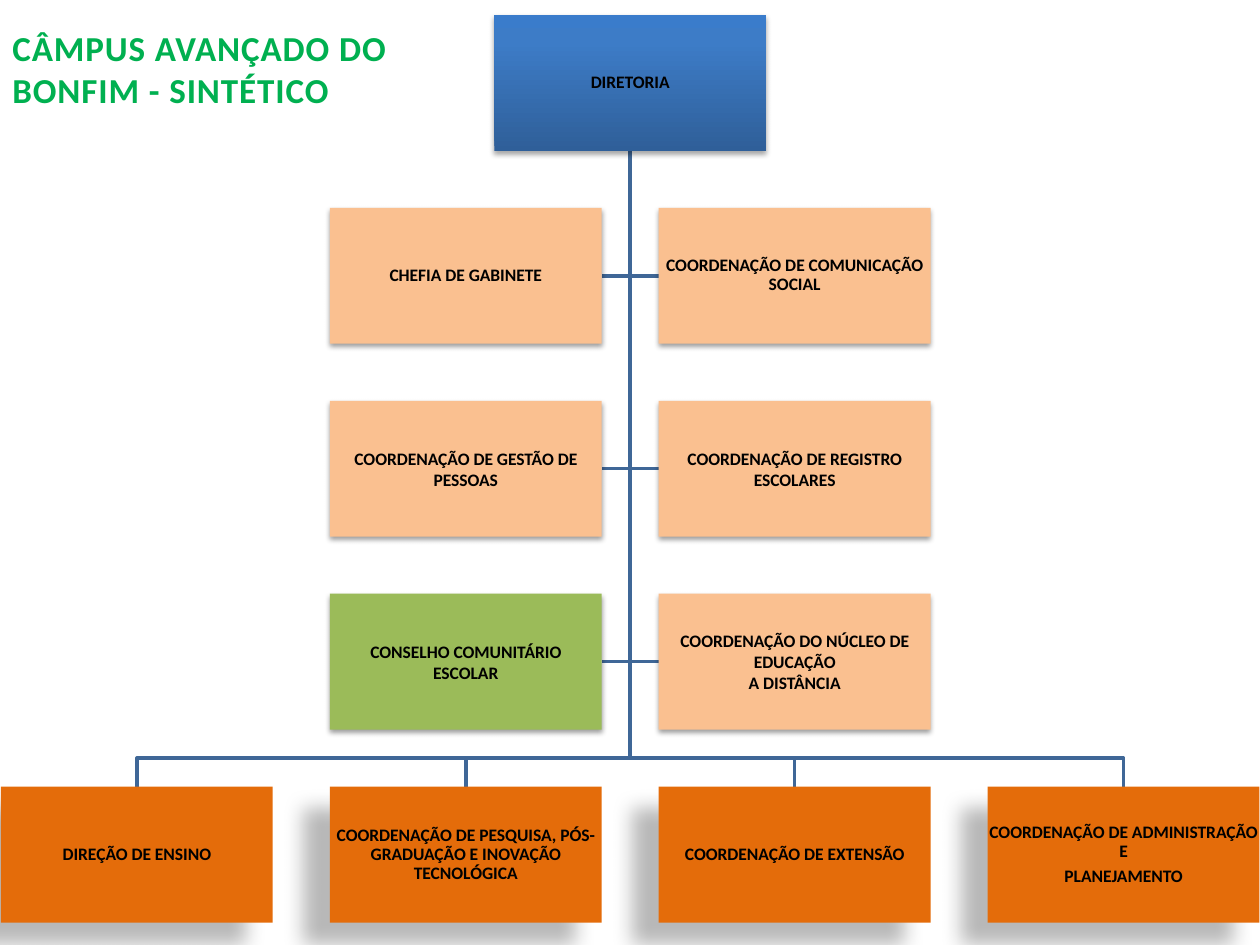
from copy import deepcopy

from lxml import etree
from pptx import Presentation
from pptx.dml.color import RGBColor
from pptx.enum.shapes import MSO_SHAPE
from pptx.enum.text import MSO_ANCHOR, MSO_AUTO_SIZE, PP_ALIGN
from pptx.oxml.ns import qn
from pptx.util import Cm, Pt

RECT = MSO_SHAPE.RECTANGLE
MIDDLE = MSO_ANCHOR.MIDDLE
CENTER = PP_ALIGN.CENTER
FIT = MSO_AUTO_SIZE.SHAPE_TO_FIT_TEXT

BLACK = RGBColor(0x00, 0x00, 0x00)
GREEN = RGBColor(0x00, 0xB0, 0x50)
STEEL = RGBColor(0x3F, 0x67, 0x97)
PEACH = RGBColor(0xFA, 0xC0, 0x90)
OLIVE = RGBColor(0x9B, 0xBB, 0x59)
ORANGE = RGBColor(0xE4, 0x6C, 0x0A)
BLUES = [(0, RGBColor(0x2F, 0x5F, 0x99)), (0.8, RGBColor(0x3D, 0x7C, 0xC7)),
         (1, RGBColor(0x3A, 0x7C, 0xCB))]

# Shadows: opacity %, blur pt, distance pt, angle
HEAD_SHADE = (35, 3.1, 1.8, 90)
STAFF_SHADE = (38, 3.1, 1.6, 90)
UNIT_SHADE = (28, 11.8, 19.7, 141)

# Chart grid in cm
BOX_W, BOX_H = 5.48, 2.74
STEP_X, STEP_Y = 6.63, 3.89

STAFF = [
    (("CHEFIA DE GABINETE", PEACH),
     ("COORDENAÇÃO DE COMUNICAÇÃO SOCIAL", PEACH)),
    (("COORDENAÇÃO DE GESTÃO DE PESSOAS", PEACH),
     ("COORDENAÇÃO DE REGISTRO ESCOLARES", PEACH)),
    (("CONSELHO COMUNITÁRIO\nESCOLAR", OLIVE),
     ("COORDENAÇÃO DO NÚCLEO DE EDUCAÇÃO\nA DISTÂNCIA", PEACH)),
]
UNITS = [
    "DIREÇÃO DE ENSINO",
    "COORDENAÇÃO DE PESQUISA, PÓS-GRADUAÇÃO E INOVAÇÃO TECNOLÓGICA",
    "COORDENAÇÃO DE EXTENSÃO",
    "COORDENAÇÃO DE ADMINISTRAÇÃO E\nPLANEJAMENTO",
]


def style(para, size, color):
    for run in para.runs:
        font = run.font
        font.name, font.size, font.bold = "Calibri", Pt(size), True
        font.color.rgb = color


def shade(shape, alpha, blur, dist, angle):
    shape.shadow.inherit = False
    effects = shape.element.spPr.find(qn("a:effectLst"))
    outer = etree.SubElement(
        effects, qn("a:outerShdw"), blurRad=str(Pt(blur)), dist=str(Pt(dist)),
        dir=str(angle * 60000), algn="ctr", rotWithShape="0")
    tint = etree.SubElement(outer, qn("a:srgbClr"), val=str(BLACK))
    etree.SubElement(tint, qn("a:alpha"), val=str(alpha * 1000))


def blend(shape):
    fill = shape.fill
    fill.gradient()
    fill.gradient_angle = 90
    stops = shape.element.spPr.find(".//" + qn("a:gsLst"))
    stops.append(deepcopy(stops[-1]))
    for stop, (place, color) in zip(fill.gradient_stops, BLUES):
        stop.position = place
        stop.color.rgb = color


def add_box(slide, left, top, text, color, shadow, tight=True):
    box = slide.shapes.add_shape(RECT, Cm(left), Cm(top), Cm(BOX_W), Cm(BOX_H))
    if color is None:
        blend(box)
    else:
        box.fill.solid()
        box.fill.fore_color.rgb = color
    box.line.fill.background()
    shade(box, *shadow)
    frame = box.text_frame
    frame.word_wrap = True
    frame.vertical_anchor = MIDDLE
    frame.margin_left = frame.margin_right = Cm(0.02)
    frame.margin_top = frame.margin_bottom = Cm(0.02)
    frame.text = text
    for para in frame.paragraphs:
        para.alignment = CENTER
        if tight:
            para.line_spacing = 0.9
            para.space_after = Pt(3.5)
        style(para, 10, BLACK)


def add_branch(slide, *points):
    """Draw an open bent line through points given in cm."""
    start, *rest = [(Cm(x), Cm(y)) for x, y in points]
    pen = slide.shapes.build_freeform(*start)
    pen.add_line_segments(rest, close=False)
    branch = pen.convert_to_shape()
    branch.fill.background()
    branch.line.color.rgb = STEEL
    branch.line.width = Pt(2)
    branch.shadow.inherit = False


def add_title(slide, left, top, width, height):
    box = slide.shapes.add_textbox(Cm(left), Cm(top), Cm(width), Cm(height))
    frame = box.text_frame
    frame.word_wrap = True
    frame.auto_size = FIT
    frame.text = "CÂMPUS AVANÇADO DO BONFIM - SINTÉTICO"
    para = frame.paragraphs[0]
    style(para, 20, GREEN)
    para.runs[0].font._element.set("spc", "50")


def add_chart(slide, left, top, width):
    mid = left + width / 2
    cols = [left + STEP_X * i for i in range(len(UNITS))]
    rows = [top + STEP_Y * i for i in range(1, len(STAFF) + 1)]
    base = top + STEP_Y * (len(STAFF) + 1)
    bus = base - (STEP_X - BOX_W) / 2
    root = (mid, top + BOX_H)

    # Branches to the staff, then to the units
    for y in reversed(rows):
        half = y + BOX_H / 2
        for side in (cols[2], cols[1] + BOX_W):
            add_branch(slide, root, (mid, half), (side, half))
    for x in reversed(cols):
        axis = x + BOX_W / 2
        add_branch(slide, root, (mid, bus), (axis, bus), (axis, base))

    # Head, units and staff pairs
    add_box(slide, mid - BOX_W / 2, top, "DIRETORIA", None, HEAD_SHADE)
    for x, text in zip(cols, UNITS):
        add_box(slide, x, base, text, ORANGE, UNIT_SHADE)
    for y, pair in zip(rows, STAFF):
        for x, (text, color) in zip(cols[1:3], pair):
            add_box(slide, x, y, text, color, STAFF_SHADE, y == rows[0])


def main():
    deck = Presentation()
    deck.slide_width, deck.slide_height = Cm(25.4), Cm(19.05)
    slide = deck.slides.add_slide(deck.slide_layouts[6])
    add_chart(slide, 0.02, 0.3, 25.37)
    add_title(slide, 0, 0.41, 9.88, 1.96)
    deck.save("out.pptx")


if __name__ == "__main__":
    main()
